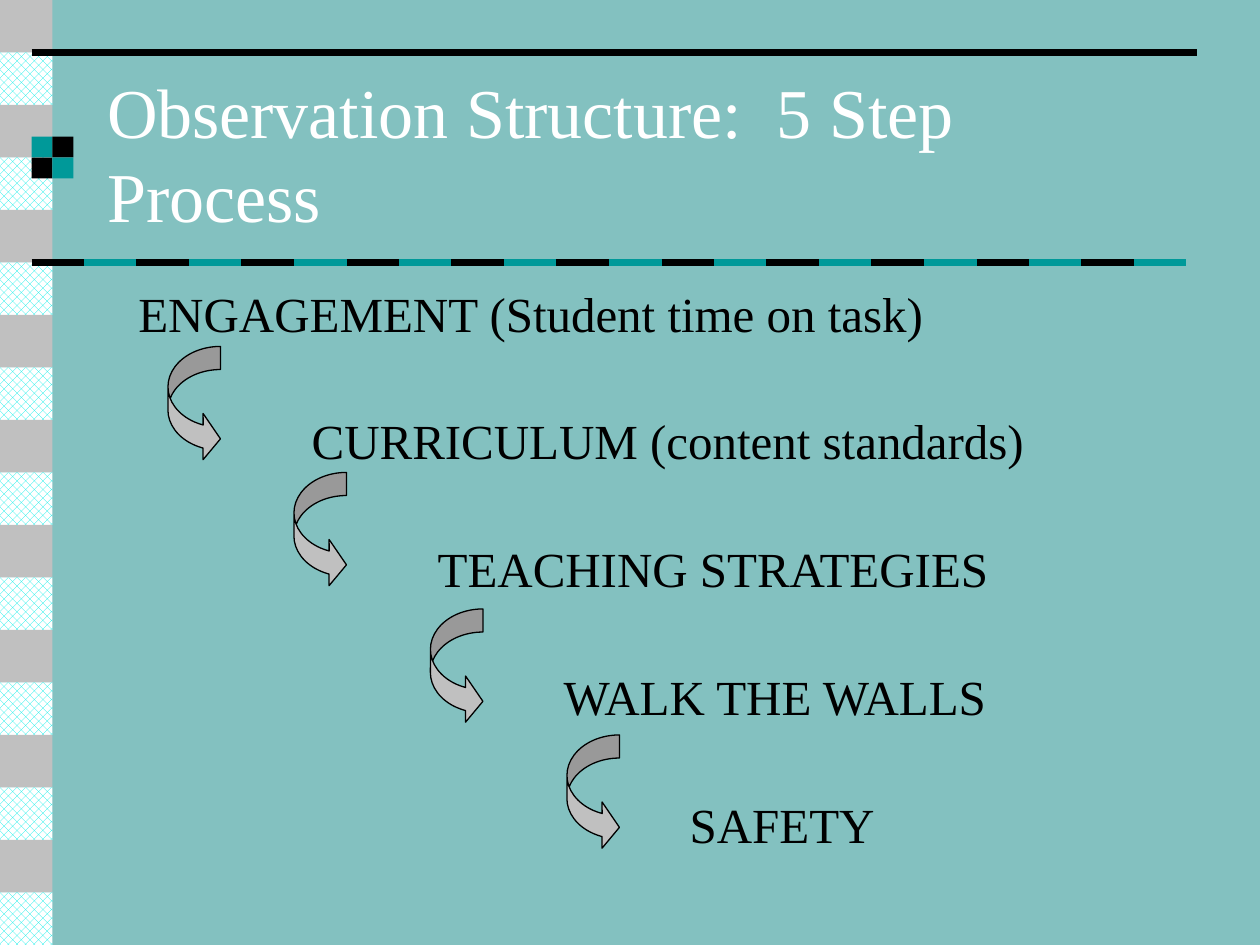
from lxml.etree import SubElement
from pptx import Presentation
from pptx.dml.color import RGBColor
from pptx.enum.dml import MSO_PATTERN
from pptx.enum.shapes import MSO_CONNECTOR, MSO_SHAPE
from pptx.enum.text import MSO_ANCHOR, MSO_AUTO_SIZE, PP_ALIGN
from pptx.oxml.ns import qn
from pptx.util import Emu, Pt

FONT = "Times New Roman"
BLACK, WHITE, GRAY, TEAL, CYAN = "000000", "FFFFFF", "C0C0C0", "009999", "00EEE8"
BACKGROUND = "83C1C0"
WIDTH, HEIGHT, TILE, CHECK = 1200, 900, 50, 20

# Step wording with its left indent
STEPS = [
    ("ENGAGEMENT (Student time on task)", 0),
    ("CURRICULUM (content standards)", 165),
    ("TEACHING STRATEGIES", 285),
    ("WALK THE WALLS", 405),
    ("SAFETY", 525),
]
ARROWS = [(160, 330), (280, 450), (410, 580), (540, 700)]


def px(n):
    return Emu(n * 7620)  # 120 px to the inch


def rgb(color):
    return RGBColor.from_string(color)


def add_block(s, kind, x, y, w, h, fill, line=None):
    sp = s.shapes.add_shape(kind, px(x), px(y), px(w), px(h))
    sp.shadow.inherit = False
    sp.fill.solid()
    sp.fill.fore_color.rgb = rgb(fill)
    if line:
        sp.line.color.rgb = rgb(line)
        sp.line.width = Pt(0.75)
    else:
        sp.line.fill.background()
    return sp


def add_rule(s, x1, x2, y, color):
    line = s.shapes.add_connector(MSO_CONNECTOR.STRAIGHT, px(x1), px(y), px(x2), px(y))
    line.line.color.rgb = rgb(color)
    line.line.width = Pt(4.5)
    SubElement(line._element.spPr, qn("a:effectLst"))


def style(p, size, color):
    p.font.name = FONT
    p.font.size = Pt(size)
    p.font.color.rgb = rgb(color)
    p.alignment = PP_ALIGN.LEFT


def add_side_strip(s):
    for i in range(HEIGHT // TILE):
        sp = add_block(s, MSO_SHAPE.RECTANGLE, 0, i * TILE, TILE, TILE, GRAY)
        if i % 2:
            sp.fill.patterned()
            sp.fill.pattern = MSO_PATTERN.PERCENT_50
            sp.fill.fore_color.rgb = rgb(CYAN)
            sp.fill.back_color.rgb = rgb(WHITE)


def add_checker(s, x, y):
    for row in range(2):
        for col in range(2):
            add_block(s, MSO_SHAPE.RECTANGLE, x + col * CHECK, y + row * CHECK,
                      CHECK, CHECK, TEAL if row == col else BLACK)


def add_dashed_rule(s, x, y, count):
    for i in range(count):
        left = x + i * TILE
        add_rule(s, left, left + TILE, y, TEAL if i % 2 else BLACK)


def set_title(s, text):
    sp = s.shapes.title
    sp.left, sp.top, sp.width, sp.height = px(90), px(70), px(1020), px(150)
    tf = sp.text_frame
    tf.text = text
    tf.word_wrap = True
    tf.auto_size = MSO_AUTO_SIZE.NONE
    tf.vertical_anchor = MSO_ANCHOR.MIDDLE
    style(tf.paragraphs[0], 40, WHITE)


def add_steps(s):
    tf = s.shapes.add_textbox(px(120), px(270), px(990), px(570)).text_frame
    tf.word_wrap = True
    for i, (text, indent) in enumerate(STEPS):
        p = tf.add_paragraph() if i else tf.paragraphs[0]
        p.text = text
        style(p, 28, BLACK)
        p.line_spacing = 0.9
        p.space_before = Pt(42.8 if i else 0)
        p._p.get_or_add_pPr().set("marL", str(px(indent)))


def add_arrow(s, x, y):
    sp = add_block(s, MSO_SHAPE.CURVED_RIGHT_ARROW, x, y, 50, 110, GRAY, BLACK)
    for i, value in enumerate((0.44, 0.88, 0.33)):
        sp.adjustments[i] = value


def main():
    prs = Presentation()
    prs.slide_width, prs.slide_height = px(WIDTH), px(HEIGHT)
    s = prs.slides.add_slide(prs.slide_layouts[5])
    s.background.fill.solid()
    s.background.fill.fore_color.rgb = rgb(BACKGROUND)

    # Decoration
    add_side_strip(s)
    add_rule(s, 30, 1140, 50, BLACK)
    add_checker(s, 30, 130)
    add_dashed_rule(s, 30, 250, 22)

    # Title and the five steps
    set_title(s, "Observation Structure:  5 Step Process")
    add_steps(s)
    for x, y in ARROWS:
        add_arrow(s, x, y)

    prs.save("out.pptx")


if __name__ == "__main__":
    main()
